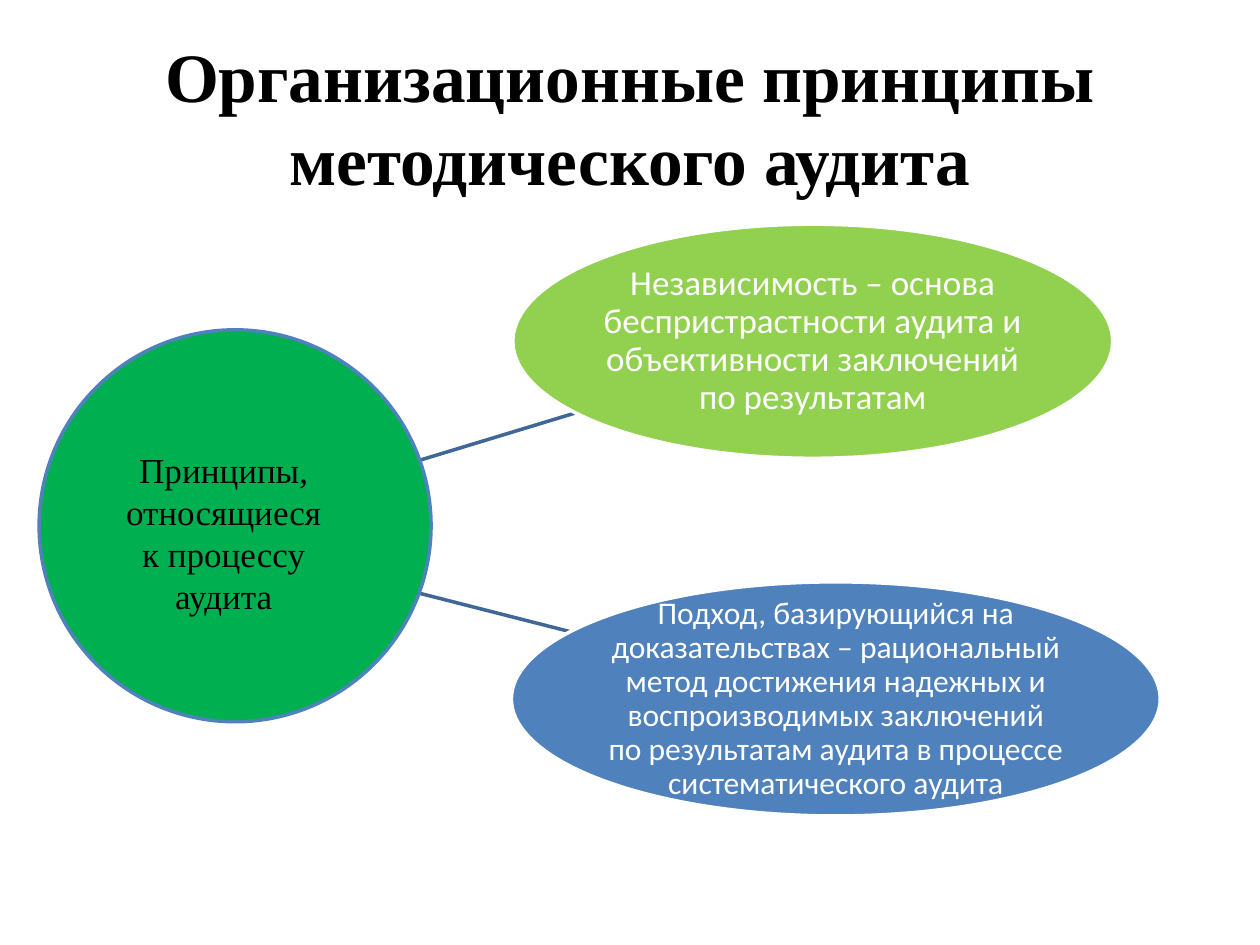
from pptx import Presentation
from pptx.dml.color import RGBColor
from pptx.enum.shapes import MSO_CONNECTOR, MSO_SHAPE
from pptx.enum.text import MSO_ANCHOR, MSO_AUTO_SIZE, PP_ALIGN
from pptx.oxml.ns import qn
from pptx.util import Cm, Pt
from lxml.etree import SubElement

BLACK = RGBColor(0x00, 0x00, 0x00)
WHITE = RGBColor(0xFF, 0xFF, 0xFF)
GREEN = RGBColor(0x00, 0xB0, 0x50)
LIME = RGBColor(0x92, 0xD0, 0x50)
BLUE = RGBColor(0x4F, 0x81, 0xBD)
DARK_BLUE = RGBColor(0x3F, 0x67, 0x97)
SERIF = "Times New Roman"
SANS = "Calibri"

PRINCIPLES = [
    ("Независимость – основа беспристрастности аудита и объективности "
     "заключений по результатам", (10.34, 4.52, 12.09, 4.72), LIME, 20),
    ("Подход, базирующийся на доказательствах – рациональный метод "
     "достижения надежных и воспроизводимых заключений по результатам "
     "аудита в процессе систематического аудита",
     (10.31, 11.73, 13.08, 4.72), BLUE, 18),
]
SPOKES = [(6.38, 11.43, 11.48, 12.73), (6.38, 9.91, 11.58, 8.33)]


def write(tf, text, size, font=SERIF, color=BLACK, bold=False, spacing=None,
          anchor=MSO_ANCHOR.MIDDLE, margin=None):
    tf.word_wrap = True
    tf.auto_size = MSO_AUTO_SIZE.NONE
    tf.vertical_anchor = anchor
    if margin is not None:
        tf.margin_left = tf.margin_right = margin
        tf.margin_top = tf.margin_bottom = margin
    p = tf.paragraphs[0]
    p.alignment = PP_ALIGN.CENTER
    p.line_spacing = spacing
    r = p.add_run()
    r.text = text
    r.font.name = font
    r.font.size = Pt(size)
    r.font.bold = bold
    r.font.color.rgb = color


def add_ellipse(s, box, fill, line):
    sp = s.shapes.add_shape(MSO_SHAPE.OVAL, *map(Cm, box))
    sp.shadow.inherit = False
    sp.fill.solid()
    sp.fill.fore_color.rgb = fill
    sp.line.color.rgb = line
    sp.line.width = Pt(2)
    return sp


def add_spoke(s, ends):
    line = s.shapes.add_connector(MSO_CONNECTOR.STRAIGHT, *map(Cm, ends))
    line.line.color.rgb = DARK_BLUE
    line.line.width = Pt(2)
    SubElement(line._element.spPr, qn("a:effectLst"))


def add_title(s, text):
    title = s.shapes.title
    title.left, title.top, title.width, title.height = map(
        Cm, (1.27, 0.76, 22.86, 3.18))
    write(title.text_frame, text, 39.6, bold=True)


def main():
    prs = Presentation()
    prs.slide_width, prs.slide_height = Cm(25.4), Cm(19.05)
    s = prs.slides.add_slide(prs.slide_layouts[5])
    add_title(s, "Организационные принципы методического аудита")
    for ends in SPOKES:
        add_spoke(s, ends)
    add_ellipse(s, (0.79, 6.65, 7.9, 7.9), GREEN, BLUE)
    for text, box, fill, size in PRINCIPLES:
        sp = add_ellipse(s, box, fill, WHITE)
        write(sp.text_frame, text, size, font=SANS, color=WHITE, spacing=0.9,
              margin=Cm(0.03))
    tb = s.shapes.add_textbox(Cm(2.11), Cm(8.92), Cm(4.8), Cm(3.68))
    write(tb.text_frame, "Принципы, относящиеся к процессу аудита", 20,
          anchor=MSO_ANCHOR.TOP)
    prs.save("out.pptx")


if __name__ == "__main__":
    main()
